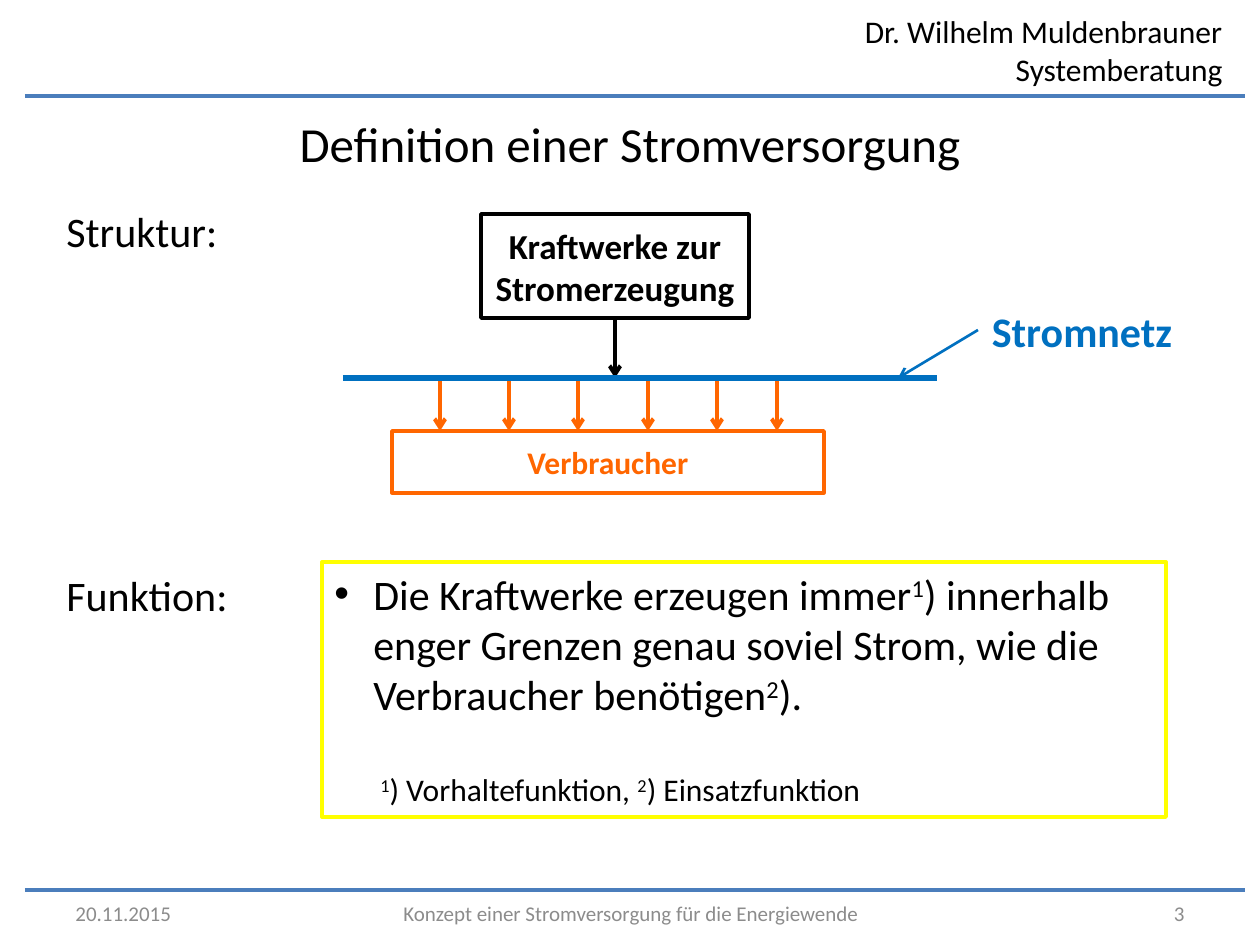
"""Build a slide that defines a power supply by its structure and function."""
from dataclasses import dataclass

from lxml.etree import SubElement
from pptx import Presentation
from pptx.dml.color import RGBColor
from pptx.enum.shapes import MSO_CONNECTOR as Connector, MSO_SHAPE as Shape
from pptx.enum.text import MSO_ANCHOR as Anchor, MSO_AUTO_SIZE as AutoSize, PP_ALIGN as Align
from pptx.oxml.ns import qn
from pptx.util import Emu, Pt


@dataclass(frozen=True)
class Theme:
    font: str = "Calibri"
    text: str = "000000"
    muted: str = "8C8C8C"
    rule: str = "4B7EBC"
    grid: str = "0070C0"
    consumer: str = "FF6600"
    frame: str = "FFFF00"
    title: int = 28
    body: int = 24
    plant: int = 20
    small: int = 18
    footer: int = 12


THEME = Theme()
EMU_PER_PX = 914400 / 126
SLIDE_SIZE = (1260, 945)

TITLE = ("Definition einer Stromversorgung", (63, 107, 1134, 77))
LABELS = [
    ("Dr. Wilhelm Muldenbrauner\nSystemberatung", (848, 6, 387, 89),
     THEME.small, THEME.text, Align.RIGHT, Anchor.TOP, False),
    ("Struktur:", (54, 199, 198, 63), THEME.body, THEME.text, Align.LEFT, Anchor.TOP, False),
    ("Funktion:", (54, 563, 198, 63), THEME.body, THEME.text, Align.LEFT, Anchor.TOP, False),
    ("Stromnetz", (978, 299, 208, 63), THEME.body, THEME.grid, Align.CENTER, Anchor.TOP, True),
    ("20.11.2015", (63, 888, 260, 50),
     THEME.footer, THEME.muted, Align.LEFT, Anchor.MIDDLE, False),
    ("Konzept einer Stromversorgung für die Energiewende", (343, 888, 576, 50),
     THEME.footer, THEME.muted, Align.CENTER, Anchor.MIDDLE, False),
    ("3", (937, 888, 260, 50), THEME.footer, THEME.muted, Align.RIGHT, Anchor.MIDDLE, False),
]
BOXES = [
    ("Kraftwerke zur Stromerzeugung", (481, 214, 268, 104), THEME.plant, THEME.text),
    ("Verbraucher", (392, 431, 432, 62), THEME.small, THEME.consumer),
]
FUNCTION_BOX = (322, 562, 844, 255)
STATEMENT = ("Die Kraftwerke erzeugen immer^1^) innerhalb enger Grenzen "
             "genau soviel Strom, wie die Verbraucher benötigen^2^).")
FOOTNOTE = "^1^) Vorhaltefunktion, ^2^) Einsatzfunktion"

RULE_X, RULE_YS = (25, 1245), (96, 890)
GRID_X, GRID_Y = (343, 937), 378
CONSUMER_TOP = 431
CONSUMER_XS = [440, 509, 578, 648, 717, 777]


def px(value):
    return Emu(round(value * EMU_PER_PX))


def scaled(values):
    return [px(value) for value in values]


def color(value):
    return RGBColor.from_string(value)


def style_font(font, size, ink, bold=False):
    font.name, font.size, font.bold = THEME.font, Pt(size), bold
    font.color.rgb = color(ink)


def write(frame, text, size, ink, align, anchor, bold=False):
    frame.text = text
    frame.word_wrap = True
    frame.auto_size = AutoSize.NONE
    frame.vertical_anchor = anchor
    for paragraph in frame.paragraphs:
        paragraph.alignment = align
        for run in paragraph.runs:
            style_font(run.font, size, ink, bold)


def add_box(slide, box, ink, width):
    shape = slide.shapes.add_shape(Shape.RECTANGLE, *scaled(box))
    shape.shadow.inherit = False
    shape.fill.background()
    shape.line.color.rgb = color(ink)
    shape.line.width = Pt(width)
    return shape


def add_line(slide, start, end, ink, width, arrow=False):
    line = slide.shapes.add_connector(Connector.STRAIGHT, *scaled(start + end))
    line.line.color.rgb = color(ink)
    line.line.width = Pt(width)
    properties = line._element.spPr
    if arrow:
        SubElement(properties.find(qn("a:ln")), qn("a:tailEnd"), type="arrow")
    SubElement(properties, qn("a:effectLst"))


def write_marked(paragraph, text, size, indent, hanging=0):
    paragraph.alignment = Align.LEFT
    properties = paragraph._p.get_or_add_pPr()
    properties.set("marL", str(px(indent)))
    properties.set("indent", str(px(-hanging)))
    if hanging:
        SubElement(properties, qn("a:buFont"), typeface="Arial")
        SubElement(properties, qn("a:buChar"), char="•")
    for index, part in enumerate(text.split("^")):
        if part:
            run = paragraph.add_run()
            run.text = part
            style_font(run.font, size, THEME.text)
            if index % 2:
                run._r.get_or_add_rPr().set("baseline", "30000")


def add_function_box(slide):
    frame = add_box(slide, FUNCTION_BOX, THEME.frame, 2.25).text_frame
    frame.word_wrap = True
    frame.vertical_anchor = Anchor.TOP
    write_marked(frame.paragraphs[0], STATEMENT, THEME.body, 39, 39)
    footnote = frame.add_paragraph()
    footnote.space_before = Pt(29)
    write_marked(footnote, FOOTNOTE, THEME.small, 46)


def add_diagram(slide):
    for text, box, size, ink in BOXES:
        shape = add_box(slide, box, ink, 2)
        write(shape.text_frame, text, size, ink, Align.CENTER, Anchor.MIDDLE, True)
    add_line(slide, (615, 319), (615, GRID_Y), THEME.text, 2.25, True)
    add_line(slide, (978, 330), (898, GRID_Y), THEME.grid, 1.5, True)
    for x in CONSUMER_XS:
        add_line(slide, (x, GRID_Y), (x, CONSUMER_TOP), THEME.consumer, 2.25, True)
    add_line(slide, (GRID_X[0], GRID_Y), (GRID_X[1], GRID_Y), THEME.grid, 3)


def main():
    presentation = Presentation()
    presentation.slide_width, presentation.slide_height = scaled(SLIDE_SIZE)
    slide = presentation.slides.add_slide(presentation.slide_layouts[5])

    text, box = TITLE
    title = slide.shapes.title
    title.left, title.top, title.width, title.height = scaled(box)
    write(title.text_frame, text, THEME.title, THEME.text, Align.CENTER, Anchor.TOP)

    for y in RULE_YS:
        add_line(slide, (RULE_X[0], y), (RULE_X[1], y), THEME.rule, 2.25)
    for text, box, *style in LABELS:
        write(slide.shapes.add_textbox(*scaled(box)).text_frame, text, *style)
    add_function_box(slide)
    add_diagram(slide)
    presentation.save("out.pptx")


if __name__ == "__main__":
    main()
